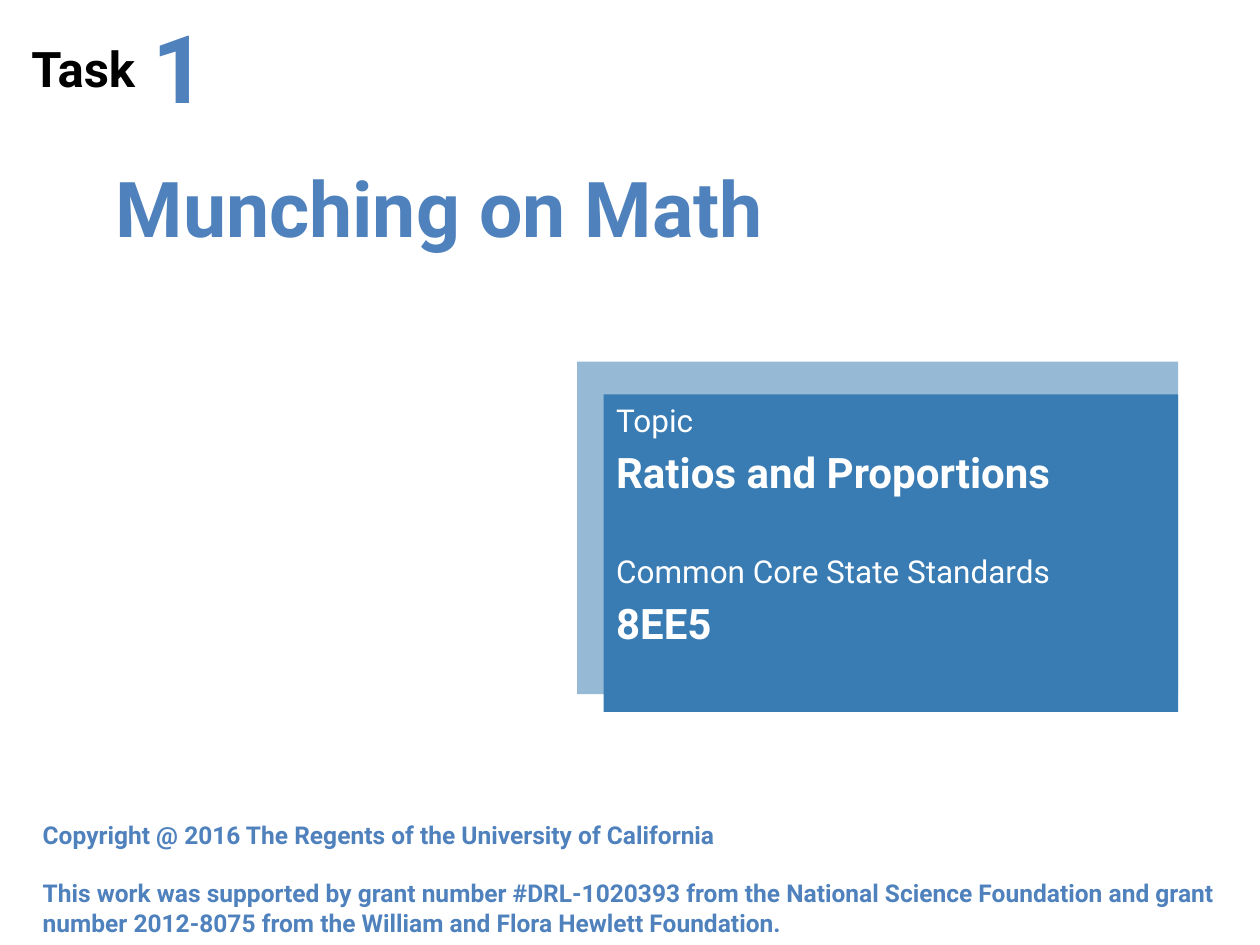
from lxml.etree import SubElement
from pptx import Presentation
from pptx.dml.color import RGBColor
from pptx.enum.shapes import MSO_SHAPE
from pptx.enum.text import MSO_ANCHOR, PP_ALIGN
from pptx.oxml.ns import qn
from pptx.util import Inches, Pt

BLACK = RGBColor(0, 0, 0)
WHITE = RGBColor(255, 255, 255)
BLUE = RGBColor(0x4F, 0x81, 0xBD)
PANEL = RGBColor(0x39, 0x7C, 0xB3)
FONT = "Roboto"
WIDE, HIGH = 10, 7.5

# Lines: text, size, bold, space before in points
TITLE = [("Munching on Math", 44, True, 0)]
TOPIC = [
    ("Topic", 18, False, 3.6),
    ("Ratios and Proportions", 24, True, 4.8),
    ("Common Core State Standards", 18, False, 31),
    ("8EE5", 24, True, 4.8),
]
TASK = [("Task", 28, True, 0)]
NUMBER = [("1", 54, True, 0)]
CREDITS = [
    ("Copyright @ 2016 The Regents of the University of California", 14, True, 0),
    ("This work was supported by grant number #DRL-1020393 from the National "
     "Science Foundation and grant number 2012-8075 from the William and Flora "
     "Hewlett Foundation.", 14, True, 16.4),
]

# Left, top, width, height in percent of the slide
AREAS = {
    "title": (1.5, 14.67, 66.8, 14.4),
    "band": (45.8, 38.27, 47.7, 35.2),
    "topic": (47.9, 41.73, 45.6, 33.6),
    "task": (1.5, 1.73, 11.8, 10.8),
    "number": (11.1, -0.93, 10.2, 15.73),
    "credits": (2.4, 86.13, 95.2, 13.87),
}


def area(name):
    sides = (WIDE, HIGH, WIDE, HIGH)
    return [Inches(part * side / 100) for part, side in zip(AREAS[name], sides)]


def place(shape, name):
    shape.left, shape.top, shape.width, shape.height = area(name)


def write(shape, lines, color, anchor=MSO_ANCHOR.MIDDLE, align=PP_ALIGN.LEFT):
    frame = shape.text_frame
    frame.word_wrap = True
    frame.vertical_anchor = anchor
    for i, (text, size, bold, gap) in enumerate(lines):
        para = frame.add_paragraph() if i else frame.paragraphs[0]
        para.alignment = align
        para.space_before = Pt(gap)
        run = para.add_run()
        run.text = text
        style = {"name": FONT, "size": Pt(size), "bold": bold}
        for key, value in style.items():
            setattr(run.font, key, value)
        run.font.color.rgb = color


def paint(shape, color):
    shape.fill.solid()
    shape.fill.fore_color.rgb = color
    shape.line.fill.background()


def main():
    deck = Presentation()
    deck.slide_width, deck.slide_height = Inches(WIDE), Inches(HIGH)
    slide = deck.slides.add_slide(deck.slide_layouts[0])
    title, topic = slide.shapes.title, slide.placeholders[1]

    place(title, "title")
    write(title, TITLE, BLUE, align=PP_ALIGN.CENTER)

    place(topic, "topic")
    paint(topic, PANEL)
    write(topic, TOPIC, WHITE, MSO_ANCHOR.TOP)

    band = slide.shapes.add_shape(MSO_SHAPE.RECTANGLE, *area("band"))
    band.shadow.inherit = False
    paint(band, PANEL)
    tint = band.element.find(".//" + qn("a:srgbClr"))
    SubElement(tint, qn("a:alpha"), val="53000")
    title.element.addprevious(band.element)

    for name, lines, color, anchor in (
        ("task", TASK, BLACK, MSO_ANCHOR.MIDDLE),
        ("number", NUMBER, BLUE, MSO_ANCHOR.MIDDLE),
        ("credits", CREDITS, BLUE, MSO_ANCHOR.TOP),
    ):
        write(slide.shapes.add_textbox(*area(name)), lines, color, anchor)

    deck.save("out.pptx")


if __name__ == "__main__":
    main()
